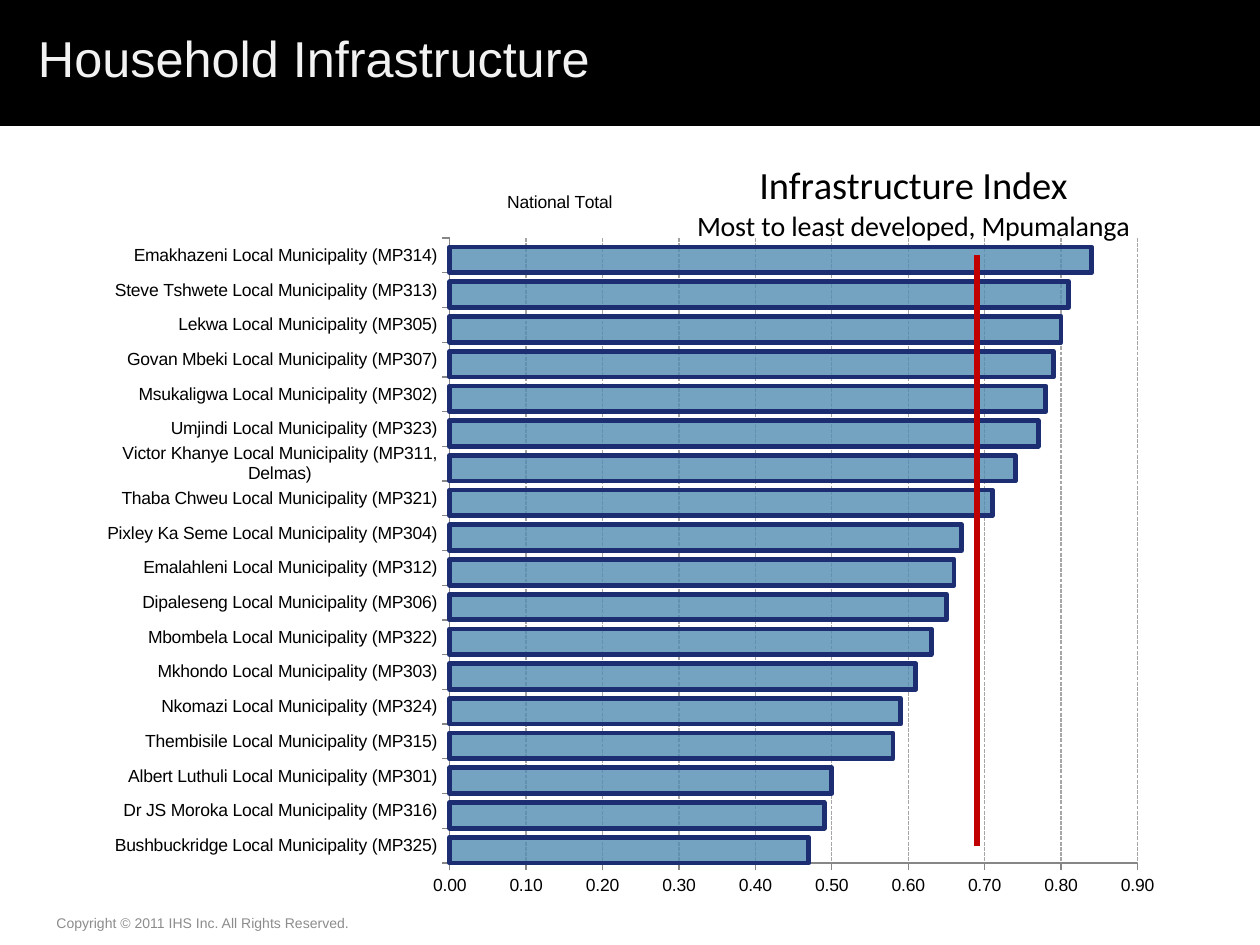
from dataclasses import dataclass

from lxml.etree import SubElement
from pptx import Presentation
from pptx.chart.data import CategoryChartData
from pptx.dml.color import RGBColor
from pptx.enum.chart import XL_CHART_TYPE, XL_LEGEND_POSITION, XL_TICK_MARK
from pptx.enum.dml import MSO_LINE
from pptx.enum.shapes import MSO_SHAPE
from pptx.enum.text import MSO_ANCHOR, PP_ALIGN
from pptx.oxml import parse_xml
from pptx.oxml.ns import nsdecls, qn
from pptx.util import Pt

PX = 914400 / 126
SLIDE_W, SLIDE_H = 1260, 945


@dataclass(frozen=True)
class Theme:
    font: str = "Arial"
    chart_title_font: str = "Calibri"
    banner: str = "000000"
    heading: str = "F2F2F2"
    text: str = "000000"
    muted: str = "8C8C8C"
    axis: str = "868686"
    grid: str = "A6A6A6"
    bar: str = "528CB2"
    bar_edge: str = "1C2D72"
    average: str = "C00000"
    heading_size: float = 28.8
    chart_title_size: int = 22
    subtitle_size: int = 16
    label_size: int = 10
    copyright_size: int = 8


THEME = Theme()
NATIONAL_TOTAL = 0.69

# Least to most developed, as the axis runs upwards
INDEX = {
    "Bushbuckridge Local Municipality (MP325)": 0.47,
    "Dr JS Moroka Local Municipality (MP316)": 0.49,
    "Albert Luthuli Local Municipality (MP301)": 0.50,
    "Thembisile Local Municipality (MP315)": 0.58,
    "Nkomazi Local Municipality (MP324)": 0.59,
    "Mkhondo Local Municipality (MP303)": 0.61,
    "Mbombela Local Municipality (MP322)": 0.63,
    "Dipaleseng Local Municipality (MP306)": 0.65,
    "Emalahleni Local Municipality (MP312)": 0.66,
    "Pixley Ka Seme Local Municipality (MP304)": 0.67,
    "Thaba Chweu Local Municipality (MP321)": 0.71,
    "Victor Khanye Local Municipality (MP311, Delmas)": 0.74,
    "Umjindi Local Municipality (MP323)": 0.77,
    "Msukaligwa Local Municipality (MP302)": 0.78,
    "Govan Mbeki Local Municipality (MP307)": 0.79,
    "Lekwa Local Municipality (MP305)": 0.80,
    "Steve Tshwete Local Municipality (MP313)": 0.81,
    "Emakhazeni Local Municipality (MP314)": 0.84,
}


def px(*lengths):
    return [round(length * PX) for length in lengths]


def style(font, size, color, name=THEME.font):
    font.size = Pt(size)
    font.name = name
    font.bold = False
    font.color.rgb = RGBColor.from_string(color)


def add_run(paragraph, text, *look):
    run = paragraph.add_run()
    run.text = text
    style(run.font, *look)


def draw_banner(slide, box):
    left, top, width, height = box
    banner = slide.shapes.add_shape(MSO_SHAPE.RECTANGLE, *px(*box))
    banner.shadow.inherit = False
    banner.fill.solid()
    banner.fill.fore_color.rgb = RGBColor.from_string(THEME.banner)
    banner.line.fill.background()

    # Heading, brought in front of the banner
    heading = slide.shapes.title
    banner._element.addnext(heading._element)
    heading.left, heading.top, heading.width, heading.height = px(
        left, top + 24, width - 147, 96)
    frame = heading.text_frame
    frame.word_wrap = True
    frame.vertical_anchor = MSO_ANCHOR.BOTTOM
    frame.margin_left, frame.margin_top, frame.margin_right, frame.margin_bottom = px(
        38, 13, 13, 32)
    frame.paragraphs[0].alignment = PP_ALIGN.LEFT
    add_run(frame.paragraphs[0], "Household Infrastructure",
            THEME.heading_size, THEME.heading)


def draw_copyright(slide, box):
    frame = slide.shapes.add_textbox(*px(*box)).text_frame
    frame.word_wrap = True
    add_run(frame.paragraphs[0], "Copyright © 2011 IHS Inc. All Rights Reserved.",
            THEME.copyright_size, THEME.muted)


def place(part, target="", **fractions):
    """Give a chart part a manual layout, in fractions of the chart."""
    for old in part.findall(qn("c:layout")):
        part.remove(old)
    layout = parse_xml(f"<c:layout {nsdecls('c')}><c:manualLayout/></c:layout>")
    if target:
        SubElement(layout[0], qn("c:layoutTarget")).set("val", target)
    for side in ("xMode", "yMode"):
        SubElement(layout[0], qn(f"c:{side}")).set("val", "edge")
    for side, value in fractions.items():
        SubElement(layout[0], qn(f"c:{side}")).set("val", str(value))
    overlay = part.find(qn("c:overlay"))
    if overlay is None:
        part.insert(0, layout)
    else:
        overlay.addprevious(layout)


def style_title(chart):
    title = chart.chart_title
    frame = title.text_frame
    face = THEME.text, THEME.chart_title_font
    add_run(frame.paragraphs[0], "Infrastructure Index", THEME.chart_title_size, *face)
    add_run(frame.add_paragraph(), "Most to least developed, Mpumalanga",
            THEME.subtitle_size, *face)
    place(title._element, x=0.57, y=0.02)


def style_legend(chart):
    chart.has_legend = True
    legend = chart.legend
    legend.position = XL_LEGEND_POSITION.RIGHT
    legend.include_in_layout = False
    style(legend.font, THEME.label_size, THEME.text)
    # Only the municipalities are named
    legend._element.find(qn("c:legendPos")).addnext(parse_xml(
        f'<c:legendEntry {nsdecls("c")}><c:idx val="1"/><c:delete val="1"/></c:legendEntry>'))
    place(legend._element, x=0.34, y=0.06, w=0.19, h=0.04)


def style_axes(chart):
    for axis in (chart.category_axis, chart.value_axis):
        axis.major_tick_mark = XL_TICK_MARK.OUTSIDE
        axis.minor_tick_mark = XL_TICK_MARK.NONE
        axis.format.line.color.rgb = RGBColor.from_string(THEME.axis)
        axis.format.line.width = Pt(0.75)
        style(axis.tick_labels.font, THEME.label_size, THEME.text)
    scale = chart.value_axis
    scale.minimum_scale, scale.maximum_scale, scale.major_unit = 0, 0.9, 0.1
    scale.tick_labels.number_format = "#,##0.00"
    scale.tick_labels.number_format_is_linked = False
    grid = scale.major_gridlines.format.line
    grid.color.rgb = RGBColor.from_string(THEME.grid)
    grid.width = Pt(0.75)
    grid.dash_style = MSO_LINE.SQUARE_DOT


def style_series(plot):
    plot.gap_width, plot.overlap = 0, 65
    plot.vary_by_categories = False
    municipalities, national = plot.series
    municipalities.invert_if_negative = national.invert_if_negative = False
    bars = municipalities.format
    bars.fill.solid()
    bars.fill.fore_color.rgb = RGBColor.from_string(THEME.bar)
    fill_color = next(municipalities._element.iter(qn("a:srgbClr")))
    SubElement(fill_color, qn("a:alpha")).set("val", "80000")
    bars.line.color.rgb = RGBColor.from_string(THEME.bar_edge)
    bars.line.width = Pt(2.75)

    # The national total shows as a trend line only
    national.format.fill.background()
    national.format.line.fill.background()
    national._element.find(qn("c:cat")).addprevious(parse_xml(
        f'<c:trendline {nsdecls("c", "a")}><c:spPr><a:ln w="{Pt(3)}"><a:solidFill>'
        f'<a:srgbClr val="{THEME.average}"/></a:solidFill></a:ln></c:spPr>'
        '<c:trendlineType val="linear"/><c:dispRSqr val="0"/><c:dispEq val="0"/>'
        '</c:trendline>'))


def draw_index_chart(slide, box):
    data = CategoryChartData(number_format="0.00")
    data.categories = list(INDEX)
    data.add_series("Infrastructure Index", list(INDEX.values()))
    data.add_series("National Total", [NATIONAL_TOTAL] * len(INDEX))
    chart = slide.shapes.add_chart(XL_CHART_TYPE.BAR_CLUSTERED, *px(*box), data).chart
    style(chart.font, THEME.label_size, THEME.text)
    style_title(chart)
    style_legend(chart)
    style_axes(chart)
    style_series(chart.plots[0])
    plot_area = next(chart._chartSpace.iter(qn("c:plotArea")))
    place(plot_area, "inner", x=0.348, y=0.127, w=0.627, h=0.817)


def main():
    deck = Presentation()
    deck.slide_width, deck.slide_height = px(SLIDE_W, SLIDE_H)
    slide = deck.slides.add_slide(deck.slide_layouts.get_by_name("Title Only"))
    draw_copyright(slide, (44, 908, 450, 30))
    draw_banner(slide, (0, 0, SLIDE_W, 126))
    draw_index_chart(slide, (68, 141, 1097, 765))
    deck.save("out.pptx")


if __name__ == "__main__":
    main()
